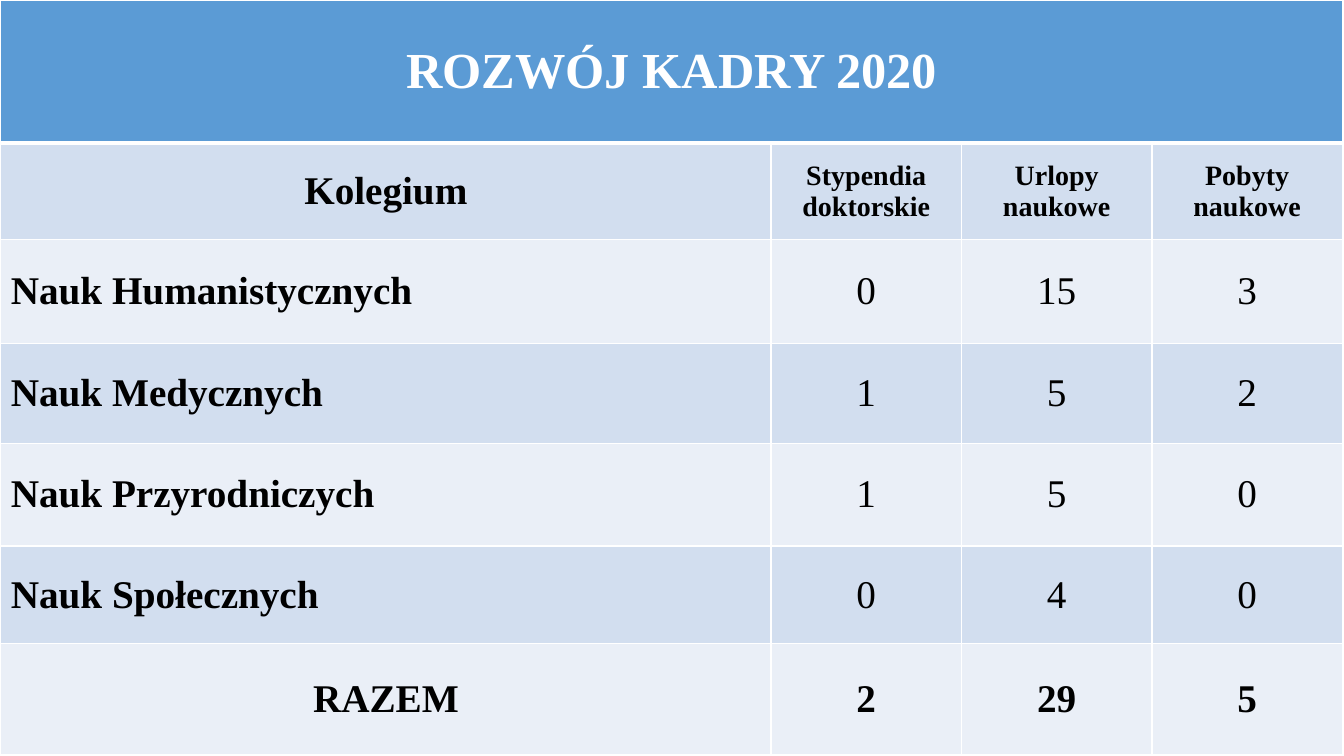
from dataclasses import dataclass
from lxml.etree import SubElement
from pptx import Presentation
from pptx.dml.color import RGBColor as RGB
from pptx.enum.text import MSO_ANCHOR as Anchor, PP_ALIGN as Align
from pptx.oxml.ns import qn
from pptx.util import Cm, Pt


@dataclass(frozen=True)
class Theme:
    """Colours, font and type sizes of the slide."""
    font: str = "Times New Roman"
    white: str = "FFFFFF"
    black: str = "000000"
    head: str = "5B9BD5"
    bands: tuple = ("D2DEEF", "EAEFF7")
    title: int = 36
    body: int = 28
    label: int = 20
    thin: int = 1
    thick: int = 3


THEME = Theme()
TITLE = "ROZWÓJ KADRY 2020"
ROWS = [
    ("Kolegium", "Stypendia doktorskie", "Urlopy naukowe", "Pobyty naukowe"),
    ("Nauk Humanistycznych", 0, 15, 3),
    ("Nauk Medycznych", 1, 5, 2),
    ("Nauk Przyrodniczych", 1, 5, 0),
    ("Nauk Społecznych", 0, 4, 0),
    ("RAZEM", 2, 29, 5),
]
WIDTHS = (19.41, 4.8, 4.8, 4.8)
HEIGHTS = (3.58, 2.44, 2.62, 2.51, 2.59, 2.46, 2.79)


def add_edges(cell, top, bottom):
    """Draw white borders around a cell, with the given top and bottom widths."""
    props = cell._tc.get_or_add_tcPr()
    sides = {"L": THEME.thin, "R": THEME.thin, "T": top, "B": bottom}
    for side, width in sides.items():
        line = SubElement(props, qn(f"a:ln{side}"), w=str(Pt(width)))
        fill = SubElement(line, qn("a:solidFill"))
        SubElement(fill, qn("a:srgbClr"), val=THEME.white)


def paint(cell, fill, top=THEME.thin, bottom=THEME.thin):
    """Give a cell its borders, fill and vertical centring."""
    add_edges(cell, top, bottom)
    cell.fill.solid()
    cell.fill.fore_color.rgb = RGB.from_string(fill)
    cell.vertical_anchor = Anchor.MIDDLE


def write(cell, text, size, color=THEME.black, bold=True, align=Align.CENTER):
    """Put one styled paragraph in a cell."""
    cell.text = str(text)
    para = cell.text_frame.paragraphs[0]
    para.alignment = align
    font = para.font
    font.name, font.size, font.bold = THEME.font, Pt(size), bold
    font.color.rgb = RGB.from_string(color)


def add_title(table):
    """Fill the merged top row."""
    for cell in table.rows[0].cells:
        paint(cell, THEME.head, bottom=THEME.thick)
    first = table.cell(0, 0)
    first.merge(table.cell(0, len(WIDTHS) - 1))
    write(first, TITLE, THEME.title, THEME.white)


def add_row(table, row, values):
    """Fill one banded row of labels or numbers."""
    head, total = row == 1, row == len(ROWS)
    for col, value in enumerate(values):
        cell = table.cell(row, col)
        paint(cell, THEME.bands[(row - 1) % 2],
              top=THEME.thick if head else THEME.thin)
        name = col == 0
        write(cell, value,
              THEME.label if head and not name else THEME.body,
              bold=head or total or name,
              align=Align.LEFT if name and not (head or total) else Align.CENTER)


def add_grid(slide):
    """Add the whole table to the slide."""
    frame = slide.shapes.add_table(
        len(HEIGHTS), len(WIDTHS), Cm(0.02), Cm(0.02),
        Cm(sum(WIDTHS)), Cm(sum(HEIGHTS)))
    table = frame.table
    for col, width in zip(table.columns, WIDTHS):
        col.width = Cm(width)
    for row, height in zip(table.rows, HEIGHTS):
        row.height = Cm(height)
    add_title(table)
    for row, values in enumerate(ROWS, 1):
        add_row(table, row, values)


def main():
    """Build and save the slide."""
    deck = Presentation()
    deck.slide_width, deck.slide_height = Cm(33.87), Cm(19.05)
    add_grid(deck.slides.add_slide(deck.slide_layouts[6]))
    deck.save("out.pptx")


if __name__ == "__main__":
    main()
